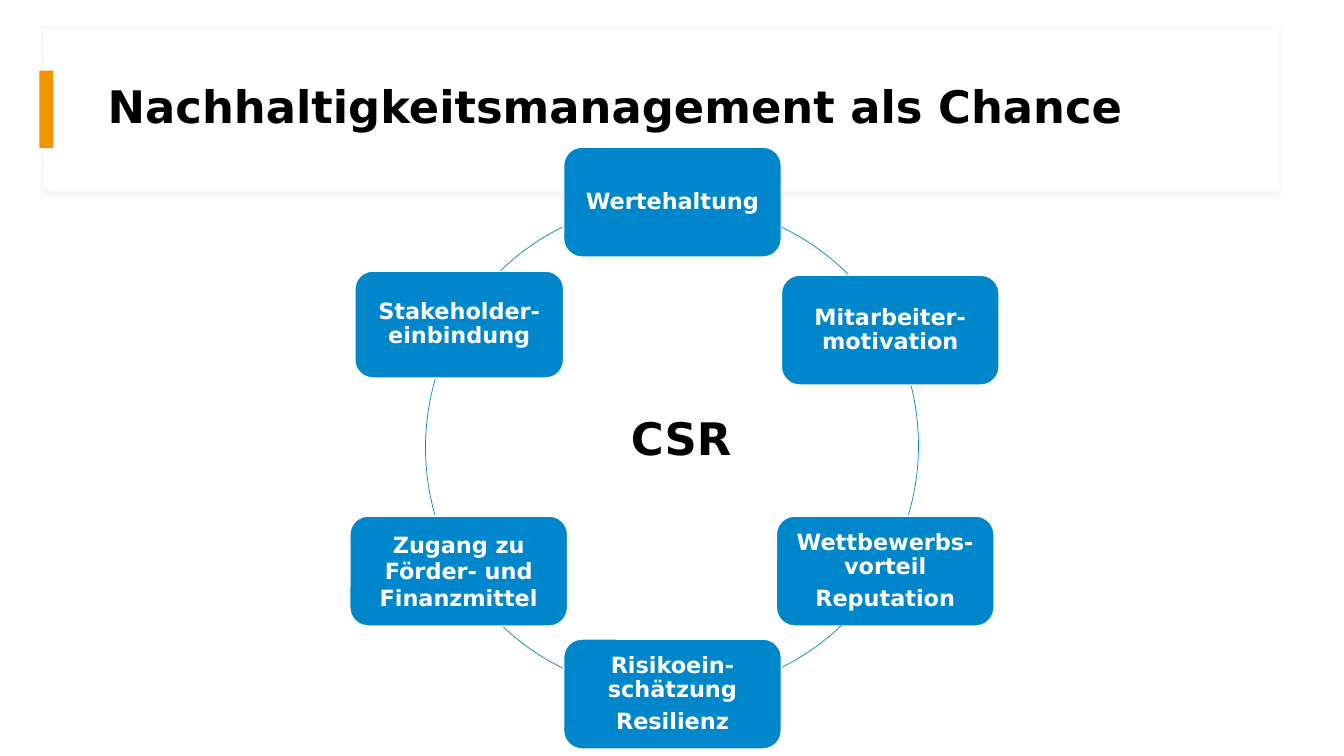
from lxml import etree
from pptx import Presentation
from pptx.dml.color import RGBColor
from pptx.enum.shapes import MSO_SHAPE
from pptx.enum.text import MSO_ANCHOR, PP_ALIGN
from pptx.oxml.ns import qn
from pptx.util import Inches, Pt

FONT = "DejaVu Sans"
COLORS = {"blue": "0086CB", "orange": "F29400", "white": "FFFFFF",
          "black": "000000", "frame": "EBEEF2", "shadow": "D9D9D9"}

TITLE = "Nachhaltigkeitsmanagement als Chance"
CENTRE = "CSR"
BOX_SIZE = (2.16, 1.09)
# paragraphs, left, top, size, line spacing, space after
TOPICS = [
    (["Wertehaltung"], 5.59, 1.46, BOX_SIZE, 0.9, 5.6),
    (["Mitarbeiter-motivation"], 7.75, 2.73, BOX_SIZE, 0.9, 5.6),
    (["Wettbewerbs-vorteil", "Reputation"], 7.7, 5.12, BOX_SIZE, 0.9, 5.6),
    (["Risikoein-schätzung", "Resilienz"], 5.59, 6.34, BOX_SIZE, 0.9, 5.6),
    (["Zugang zu Förder- und Finanzmittel"], 3.47, 5.12, BOX_SIZE, 1.0, 0),
    (["Stakeholder-einbindung"], 3.52, 2.69, (2.07, 1.06), 0.9, 5.6),
]
RING_DIAMETER = 4.88
# left, top of the circle; start and end angle, clockwise from the right
RING_ARCS = [
    (4.25, 2.01, 295.7, 315.2),
    (4.23, 1.98, 346, 16.4),
    (4.22, 2, 46.3, 63.5),
    (4.22, 2, 116.2, 133.5),
    (4.22, 2, 164, 196.2),
    (4.22, 2, 226, 243.7),
]


def color(name):
    return RGBColor.from_string(COLORS[name])


def add_block(slide, kind, box, fill=None, line=None, width=1):
    block = slide.shapes.add_shape(kind, *map(Inches, box))
    block.shadow.inherit = False
    if fill:
        block.fill.solid()
        block.fill.fore_color.rgb = color(fill)
    else:
        block.fill.background()
    if line:
        block.line.color.rgb = color(line)
        block.line.width = Pt(width)
    else:
        block.line.fill.background()
    return block


def add_shadow(block):
    effects = block.element.spPr.find(qn("a:effectLst"))
    shadow = etree.SubElement(effects, qn("a:outerShdw"), blurRad=str(Pt(4)),
                              dist=str(Pt(3)), dir=str(45 * 60000),
                              algn="tl", rotWithShape="0")
    tint = etree.SubElement(shadow, qn("a:srgbClr"), val=COLORS["shadow"])
    etree.SubElement(tint, qn("a:alpha"), val="30000")


def write(frame, lines, size, ink, align=PP_ALIGN.LEFT, spacing=1.0, after=0):
    frame.text = "\n".join(lines)
    for paragraph in frame.paragraphs:
        paragraph.alignment = align
        paragraph.line_spacing = spacing
        paragraph.space_after = Pt(after)
        for run in paragraph.runs:
            run.font.name = FONT
            run.font.size = Pt(size)
            run.font.bold = True
            run.font.color.rgb = color(ink)


def add_heading(slide, box, text, anchor, spacing):
    frame = slide.shapes.add_textbox(*map(Inches, box)).text_frame
    frame.word_wrap = True
    frame.vertical_anchor = anchor
    write(frame, [text], 32, "black", spacing=spacing)


def add_topic(slide, lines, left, top, size, spacing, after):
    topic = add_block(slide, MSO_SHAPE.ROUNDED_RECTANGLE, (left, top, *size),
                      "blue", "white")
    frame = topic.text_frame
    frame.word_wrap = True
    frame.vertical_anchor = MSO_ANCHOR.MIDDLE
    frame.margin_left = frame.margin_right = Inches(0.07)
    frame.margin_top = frame.margin_bottom = Inches(0.07)
    write(frame, lines, 16, "white", PP_ALIGN.CENTER, spacing, after)


def add_ring_arc(slide, left, top, start, end):
    arc = add_block(slide, MSO_SHAPE.ARC,
                    (left, top, RING_DIAMETER, RING_DIAMETER),
                    line="blue", width=0.5)
    # adjustments count 100000ths, arc angles 60000ths of a degree
    arc.adjustments[0] = start * 0.6
    arc.adjustments[1] = end * 0.6


def main():
    prs = Presentation()
    prs.slide_width, prs.slide_height = Inches(13.33), Inches(7.5)
    slide = prs.slides.add_slide(prs.slide_layouts[6])

    header = add_block(slide, MSO_SHAPE.RECTANGLE, (0.42, 0.27, 12.21, 1.62),
                       "white", "frame", 0.75)
    add_shadow(header)
    add_block(slide, MSO_SHAPE.RECTANGLE, (0.49, 0.28, 12.2, 1.62), "white")
    add_block(slide, MSO_SHAPE.RECTANGLE, (0.39, 0.7, 0.14, 0.77), "orange")
    add_heading(slide, (0.97, 0.44, 11.12, 1.29), TITLE, MSO_ANCHOR.MIDDLE, 0.9)

    for topic, arc in zip(TOPICS, RING_ARCS):
        add_topic(slide, *topic)
        add_ring_arc(slide, *arc)
    add_heading(slide, (6.16, 4.03, 1.57, 0.64), CENTRE, MSO_ANCHOR.TOP, 1.0)
    prs.save("out.pptx")


if __name__ == "__main__":
    main()
